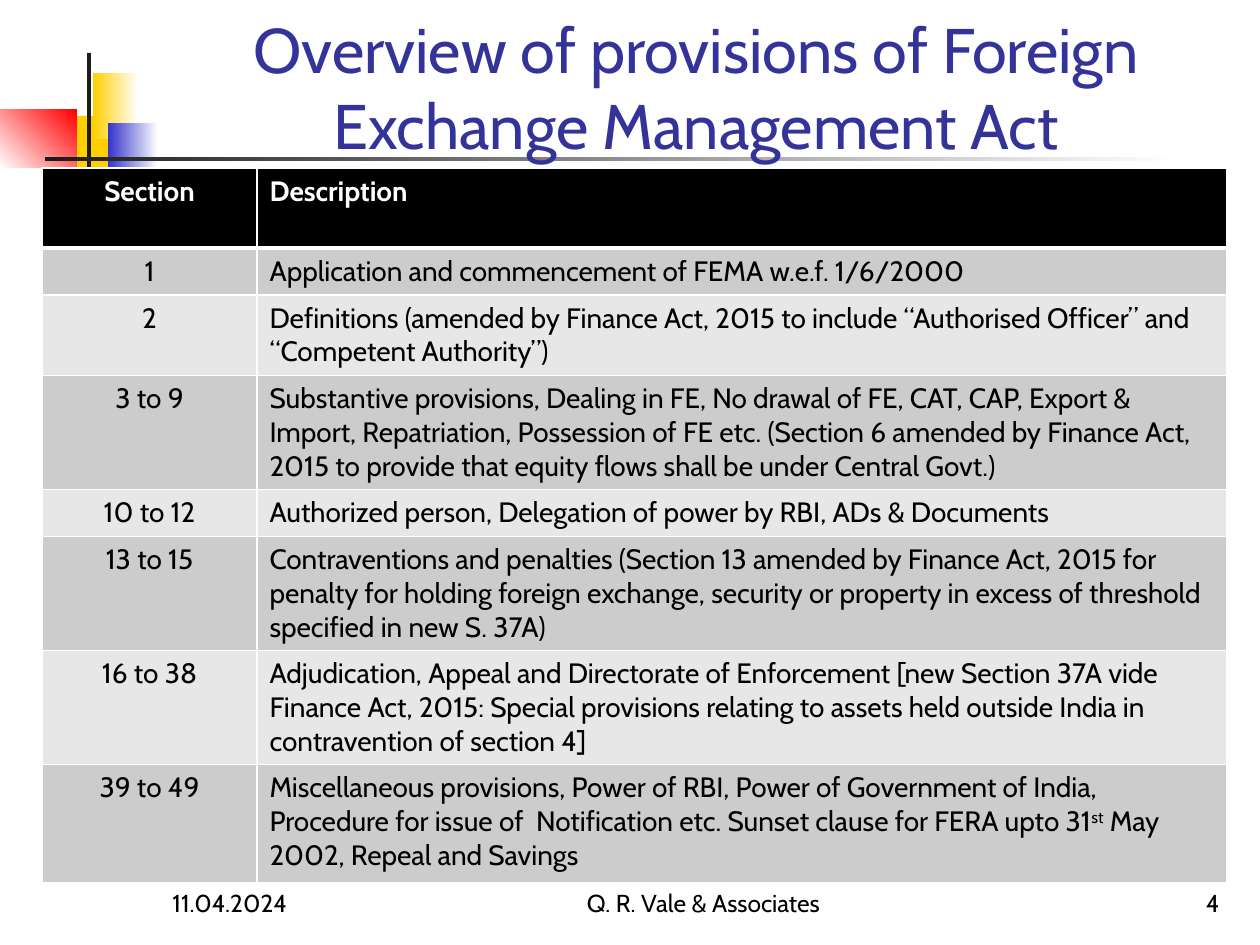
import pptx
import pptx.util
import pptx.dml.color
import pptx.enum.shapes
import pptx.enum.text
import pptx.oxml
import pptx.oxml.ns

RGB = pptx.dml.color.RGBColor
ALIGN = pptx.enum.text.PP_ALIGN
BOTTOM = pptx.enum.text.MSO_ANCHOR.BOTTOM
RECT = pptx.enum.shapes.MSO_SHAPE.RECTANGLE

WHITE = RGB(0xFF, 0xFF, 0xFF)
BLACK = RGB(0, 0, 0)
INK = RGB(0x1C, 0x1C, 0x1C)
GOLD = RGB(0xFF, 0xCF, 0x01)
BLUE = RGB(0x33, 0x33, 0xCC)
RED = RGB(0xFF, 0, 0)
NAVY = RGB(0x33, 0x33, 0x99)
DARK = RGB(0xCC, 0xCC, 0xCC)
LIGHT = RGB(0xE7, 0xE7, 0xE7)
FONT = "Cabin"
SCALE = 914400 / 126

# Section, row height, description runs (text, raised)
ROWS = [
    ("Section", 80, [("Description", False)]),
    ("1", 47, [("Application and commencement of FEMA w.e.f. 1/6/2000", False)]),
    ("2", 80, [("Definitions (amended by Finance Act, 2015 to include “Authorised "
                "Officer” and “Competent Authority”)", False)]),
    ("3 to 9", 114, [("Substantive provisions, Dealing in FE, No drawal of FE, CAT, CAP, "
                      "Export & Import, Repatriation, Possession of FE etc. (Section 6 "
                      "amended by Finance Act, 2015 to provide that equity flows shall "
                      "be under Central Govt.)", False)]),
    ("10 to 12", 47, [("Authorized person, Delegation of power by RBI, ADs & Documents",
                       False)]),
    ("13 to 15", 114, [("Contraventions and penalties (Section 13 amended by Finance Act, "
                        "2015 for penalty for holding foreign exchange, security or "
                        "property in excess of threshold specified in new S. 37A)", False)]),
    ("16 to 38", 114, [("Adjudication, Appeal and Directorate of Enforcement [new Section "
                        "37A vide Finance Act, 2015: Special provisions relating to assets "
                        "held outside India in contravention of section 4]", False)]),
    ("39 to 49", 118, [("Miscellaneous provisions, Power of RBI, Power of Government of "
                        "India, Procedure for issue of  Notification etc. Sunset clause "
                        "for FERA upto 31", False),
                       ("st", True),
                       (" May 2002, Repeal and Savings", False)]),
]


def px(n):
    return pptx.util.Emu(round(n * SCALE))


def write(frame, runs, size, color, align, bold=False):
    para = frame.paragraphs[0]
    para.alignment = align
    for text, raised in runs:
        run = para.add_run()
        run.text = text
        font = run.font
        font.name = FONT
        font.size = pptx.util.Pt(size)
        font.bold = bold
        font.color.rgb = color
        if raised:
            font._element.set("baseline", "30000")


def block(slide, x, y, w, h, start, end=None, angle=0):
    shape = slide.shapes.add_shape(RECT, px(x), px(y), px(w), px(h))
    shape.shadow.inherit = False
    shape.line.fill.background()
    fill = shape.fill
    if end is None:
        fill.solid()
        fill.fore_color.rgb = start
        return
    fill.gradient()
    fill.gradient_angle = angle
    for stop, color, pos in zip(fill.gradient_stops, (start, end), (0, 1)):
        stop.color.rgb = color
        stop.position = pos


def decor(slide, x, y):
    block(slide, x + 58, y + 63, 60, 66, GOLD)
    block(slide, x + 74, y + 115, 58, 66, BLUE)
    block(slide, x + 93, y + 20, 45, 66, GOLD, WHITE)
    block(slide, x + 108, y + 70, 50, 66, BLUE, WHITE)
    block(slide, x, y + 57, 77, 58, WHITE, RED, 45)
    # Crossing rules
    block(slide, x + 87, y, 4, 145, INK)
    block(slide, x + 45, y + 104, 1134, 4, INK, WHITE)


def heading(slide, x, y, w, h):
    title = slide.shapes.title
    title.left, title.top, title.width, title.height = map(px, (x, y, w, h))
    frame = title.text_frame
    frame.word_wrap = True
    frame.auto_size = pptx.enum.text.MSO_AUTO_SIZE.NONE
    frame.vertical_anchor = BOTTOM
    write(frame, [("Overview of provisions of Foreign Exchange Management Act", False)],
          36, NAVY, ALIGN.CENTER)
    # Bring the title in front of the rules
    slide.shapes._spTree.append(title._element)


def edge(cell, head):
    props = cell._tc.get_or_add_tcPr()
    for i, side in enumerate("LRTB"):
        width = pptx.util.Pt(3 if head and side == "B" else 1)
        line = pptx.oxml.parse_xml(
            f'<a:ln{side} {pptx.oxml.ns.nsdecls("a")} w="{width}"><a:solidFill>'
            f'<a:srgbClr val="{WHITE}"/></a:solidFill></a:ln{side}>')
        props.insert(i, line)


def grid(slide, x, y, cols):
    high = sum(row[1] for row in ROWS)
    table = slide.shapes.add_table(len(ROWS), len(cols), px(x), px(y),
                                   px(sum(cols)), px(high)).table
    for col, wide in zip(table.columns, cols):
        col.width = px(wide)
    for i, (label, tall, runs) in enumerate(ROWS):
        table.rows[i].height = px(tall)
        head = i == 0
        shade = BLACK if head else (LIGHT, DARK)[i % 2]
        parts = (([(label, False)], ALIGN.CENTER), (runs, ALIGN.LEFT))
        for cell, (words, align) in zip(table.rows[i].cells, parts):
            cell.fill.solid()
            cell.fill.fore_color.rgb = shade
            edge(cell, head)
            write(cell.text_frame, words, 16, WHITE if head else BLACK, align, head)


def footer(slide, x, y, h):
    parts = [
        (0, 262, "11.04.2024", ALIGN.LEFT),
        (344, 399, "Q. R. Vale & Associates", ALIGN.CENTER),
        (810, 262, "4", ALIGN.RIGHT),
    ]
    for left, w, text, align in parts:
        frame = slide.shapes.add_textbox(px(x + left), px(y), px(w), px(h)).text_frame
        frame.word_wrap = True
        frame.vertical_anchor = BOTTOM
        write(frame, [(text, False)], 14, BLACK, align)


def main():
    deck = pptx.Presentation()
    deck.slide_width, deck.slide_height = px(1260), px(945)
    slide = deck.slides.add_slide(deck.slide_layouts[5])
    decor(slide, 0, 53)
    footer(slide, 160, 861, 63)
    heading(slide, 159, 29, 1074, 139)
    grid(slide, 42, 168, (215, 970))
    deck.save("out.pptx")


if __name__ == "__main__":
    main()
